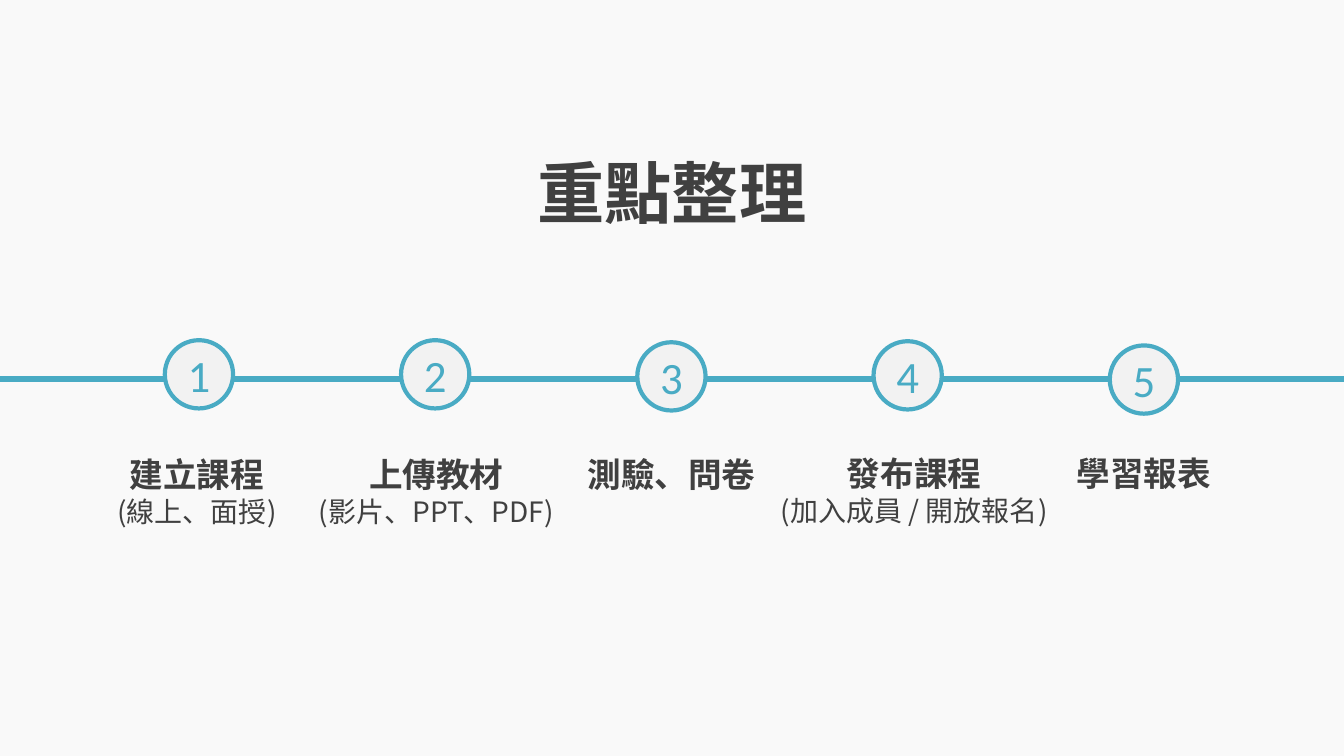
from dataclasses import dataclass

import lxml.etree
import pptx
import pptx.dml.color
import pptx.enum.shapes
import pptx.enum.text
import pptx.oxml.ns
import pptx.util

EMU_PER_PX = 9525
BACKDROP = pptx.dml.color.RGBColor(0xF9, 0xF9, 0xF9)
DISC = pptx.dml.color.RGBColor(0xF2, 0xF2, 0xF2)
TEAL = pptx.dml.color.RGBColor(0x49, 0xAB, 0xC4)
INK = pptx.dml.color.RGBColor(0x40, 0x40, 0x40)
TEXT_FONT = "Noto Sans CJK SC"
DIGIT_FONT = "Calibri"

LINE_Y = 361
FIRST_CIRCLE_LEFT = 157
CIRCLE_PITCH = 225
CIRCLE_SIZE = 65
LABEL_WIDTH = 329


@dataclass(frozen=True)
class Step:
    heading: str
    detail: str
    circle_top: int
    label_left: int
    label_top: int


STEPS = [
    Step("建立課程", "(線上、面授)", 324, 23, 428),
    Step("上傳教材", "(影片、PPT、PDF)", 324, 251, 428),
    Step("測驗、問卷", "", 326, 475, 428),
    Step("發布課程", "(加入成員 / 開放報名)", 325, 706, 427),
    Step("學習報表", "", 329, 925, 427),
]


def px(length: int) -> pptx.util.Emu:
    return pptx.util.Emu(length * EMU_PER_PX)


def write(para, text: str, size: int, color: pptx.dml.color.RGBColor,
          font_name: str = TEXT_FONT, bold: bool = False) -> None:
    """Fill a centred paragraph, with one font for Latin and Chinese text."""
    para.text = text
    para.alignment = pptx.enum.text.PP_ALIGN.CENTER
    font = para.font
    font.name, font.size, font.bold = font_name, pptx.util.Pt(size), bold
    font.color.rgb = color
    qn = pptx.oxml.ns.qn
    properties = para._p.pPr.find(qn("a:defRPr"))
    lxml.etree.SubElement(properties, qn("a:ea"), typeface=font_name)


def add_title(page) -> None:
    title = page.shapes.title
    title.left, title.top = px(436), px(134)
    title.width, title.height = px(408), px(98)
    frame = title.text_frame
    frame.auto_size = pptx.enum.text.MSO_AUTO_SIZE.NONE
    frame.vertical_anchor = pptx.enum.text.MSO_ANCHOR.MIDDLE
    write(frame.paragraphs[0], "重點整理", 48, INK, bold=True)


def add_timeline(page, width: int) -> None:
    line = page.shapes.add_connector(
        pptx.enum.shapes.MSO_CONNECTOR.STRAIGHT, px(0), px(LINE_Y), width, px(LINE_Y))
    line.line.color.rgb = TEAL
    line.line.width = pptx.util.Pt(3.75)
    lxml.etree.SubElement(line._element.spPr, pptx.oxml.ns.qn("a:effectLst"))


def add_circle(page, index: int, step: Step) -> None:
    circle = page.shapes.add_shape(
        pptx.enum.shapes.MSO_SHAPE.OVAL, px(FIRST_CIRCLE_LEFT + index * CIRCLE_PITCH),
        px(step.circle_top), px(CIRCLE_SIZE), px(CIRCLE_SIZE))
    circle.shadow.inherit = False
    circle.fill.solid()
    circle.fill.fore_color.rgb = DISC
    circle.line.color.rgb = TEAL
    circle.line.width = pptx.util.Pt(3)
    circle.text_frame.vertical_anchor = pptx.enum.text.MSO_ANCHOR.MIDDLE
    write(circle.text_frame.paragraphs[0], str(index + 1), 32, TEAL, DIGIT_FONT)


def add_label(page, step: Step) -> None:
    box = page.shapes.add_textbox(
        px(step.label_left), px(step.label_top), px(LABEL_WIDTH),
        px(81 if step.detail else 48))
    frame = box.text_frame
    frame.word_wrap = True
    frame.auto_size = pptx.enum.text.MSO_AUTO_SIZE.SHAPE_TO_FIT_TEXT
    write(frame.paragraphs[0], step.heading, 24, INK, bold=True)
    if step.detail:
        write(frame.add_paragraph(), step.detail, 20, INK)


def main() -> None:
    deck = pptx.Presentation()
    deck.slide_width, deck.slide_height = px(1280), px(720)
    page = deck.slides.add_slide(deck.slide_layouts.get_by_name("Title Only"))
    page.background.fill.solid()
    page.background.fill.fore_color.rgb = BACKDROP

    # Title and the line that joins the steps
    add_title(page)
    add_timeline(page, deck.slide_width)

    # Numbered steps with their labels
    for index, step in enumerate(STEPS):
        add_circle(page, index, step)
        add_label(page, step)

    deck.save("out.pptx")


if __name__ == "__main__":
    main()
